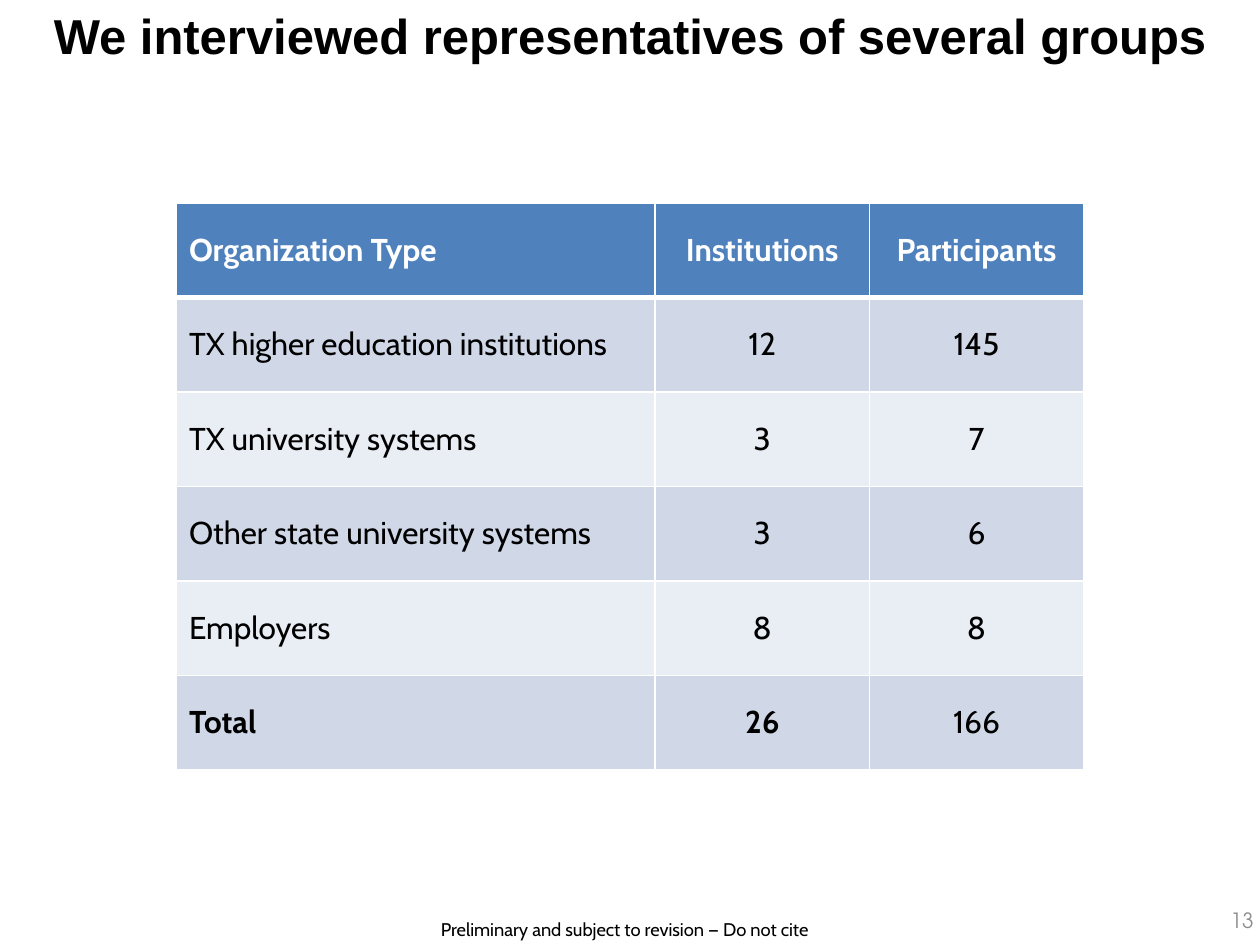
from dataclasses import dataclass

from lxml.etree import SubElement
from pptx import Presentation
from pptx.dml.color import RGBColor
from pptx.enum.text import MSO_ANCHOR, MSO_AUTO_SIZE, PP_ALIGN
from pptx.oxml.ns import qn
from pptx.util import Pt

EMU_PER_PX = 9144  # 100 px to the inch


def px(length):
    return length * EMU_PER_PX


@dataclass(frozen=True)
class Theme:
    title_font: str = "Arial"
    body_font: str = "Cabin"
    number_font: str = "TeX Gyre Adventor"
    title_size: float = 28
    table_size: float = 18
    number_size: float = 12
    footer_size: float = 10.5
    black: str = "000000"
    white: str = "FFFFFF"
    gray: str = "8C8C8C"
    header_fill: str = "4F81BD"
    band_fills: tuple = ("D0D8E8", "E9EDF4")
    border: float = 1
    header_border: float = 3


class SlideBuilder:
    def __init__(self, slide, theme):
        self.slide = slide
        self.theme = theme

    def add_run(self, paragraph, text, font, size, color, bold=False):
        run = paragraph.add_run()
        run.text = text
        run.font.name = font
        run.font.size = Pt(size)
        run.font.bold = bold
        run.font.color.rgb = RGBColor.from_string(color)

    def add_text(self, box, text, font, size, color, bold=False,
                 align=PP_ALIGN.CENTER, anchor=MSO_ANCHOR.TOP,
                 insets=(10, 5, 10, 5), line_spacing=None, grow=False):
        shape = self.slide.shapes.add_textbox(*map(px, box))
        frame = shape.text_frame
        frame.word_wrap = True
        frame.vertical_anchor = anchor
        if grow:
            frame.auto_size = MSO_AUTO_SIZE.SHAPE_TO_FIT_TEXT
        (frame.margin_left, frame.margin_top,
         frame.margin_right, frame.margin_bottom) = map(px, insets)
        paragraph = frame.paragraphs[0]
        paragraph.alignment = align
        paragraph.line_spacing = line_spacing
        self.add_run(paragraph, text, font, size, color, bold)

    def set_borders(self, cell, widths):
        properties = cell._tc.get_or_add_tcPr()
        for index, (side, width) in enumerate(widths.items()):
            line = SubElement(properties, qn(f"a:ln{side}"), w=str(Pt(width)))
            fill = SubElement(line, qn("a:solidFill"))
            SubElement(fill, qn("a:srgbClr"), val=self.theme.white)
            properties.insert(index, line)

    def add_table(self, left, top, column_widths, row_height, rows, bold_cells):
        theme = self.theme
        table = self.slide.shapes.add_table(
            len(rows), len(column_widths), px(left), px(top),
            px(sum(column_widths)), px(row_height * len(rows))).table
        for column, width in zip(table.columns, column_widths):
            column.width = px(width)
        for row_index, values in enumerate(rows):
            table.rows[row_index].height = px(row_height)
            is_header = row_index == 0
            fill = theme.header_fill if is_header else theme.band_fills[(row_index - 1) % 2]
            color = theme.white if is_header else theme.black
            for column_index, value in enumerate(values):
                cell = table.cell(row_index, column_index)
                cell.fill.solid()
                cell.fill.fore_color.rgb = RGBColor.from_string(fill)
                cell.vertical_anchor = MSO_ANCHOR.MIDDLE
                paragraph = cell.text_frame.paragraphs[0]
                paragraph.alignment = PP_ALIGN.CENTER if column_index else PP_ALIGN.LEFT
                bold = is_header or (row_index, column_index) in bold_cells
                self.add_run(paragraph, value, theme.body_font, theme.table_size, color, bold)
                self.set_borders(cell, {
                    "L": theme.border,
                    "R": theme.border,
                    "T": theme.header_border if row_index == 1 else theme.border,
                    "B": theme.header_border if is_header else theme.border,
                })


def main():
    presentation = Presentation()
    presentation.slide_width = px(1000)
    presentation.slide_height = px(750)
    slide = presentation.slides.add_slide(presentation.slide_layouts[6])
    theme = Theme()
    builder = SlideBuilder(slide, theme)

    # Footer note
    builder.add_text((199, 724, 597, 28), "Preliminary and subject to revision — Do not cite ",
                     theme.body_font, theme.footer_size, theme.black, grow=True)

    # Title
    builder.add_text((0, 0, 1000, 99), "We interviewed representatives of several groups",
                     theme.title_font, theme.title_size, theme.black, bold=True,
                     insets=(20, 10, 20, 20), line_spacing=0.9)

    # Interview counts, with the total's label and institutions in bold
    rows = [
        ("Organization Type", "Institutions", "Participants"),
        ("TX higher education institutions", "12", "145"),
        ("TX university systems", "3", "7"),
        ("Other state university systems", "3", "6"),
        ("Employers", "8", "8"),
        ("Total", "26", "166"),
    ]
    total_row = len(rows) - 1
    builder.add_table(140, 161, (380, 170, 170), 75, rows,
                      bold_cells={(total_row, 0), (total_row, 1)})

    # Slide number
    builder.add_text((767, 710, 233, 40), "13", theme.number_font, theme.number_size,
                     theme.gray, align=PP_ALIGN.RIGHT, anchor=MSO_ANCHOR.MIDDLE,
                     insets=(10, 5, 5, 5))

    presentation.save("out.pptx")


if __name__ == "__main__":
    main()
